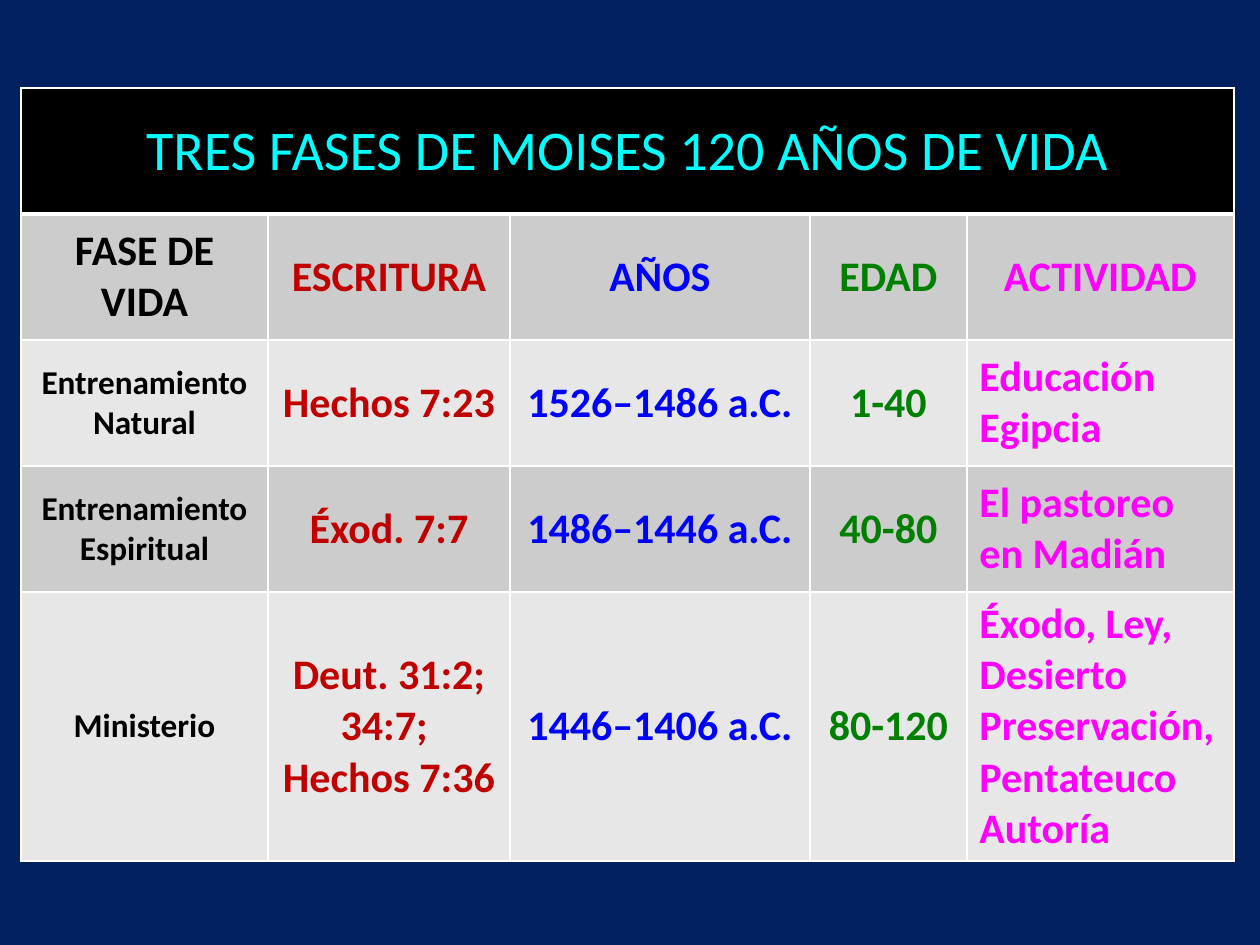
"""Build the slide with the table of the three phases of the life of Moses."""
import pptx
import pptx.util
from pptx.dml.color import RGBColor
from pptx.enum.text import MSO_ANCHOR, PP_ALIGN
from pptx.oxml import parse_xml
from pptx.oxml.ns import nsdecls

TITLE = "TRES FASES DE MOISES 120 AÑOS DE VIDA"
ROWS = [
    ["FASE DE VIDA", "ESCRITURA", "AÑOS", "EDAD", "ACTIVIDAD"],
    ["Entrenamiento\nNatural", "Hechos 7:23", "1526–1486 a.C.", "1-40",
     "Educación\nEgipcia"],
    ["Entrenamiento\nEspiritual", "Éxod. 7:7", "1486–1446 a.C.", "40-80",
     "El pastoreo en Madián"],
    ["Ministerio", "Deut. 31:2; 34:7; \nHechos 7:36", "1446–1406 a.C.", "80-120",
     "Éxodo, Ley, Desierto Preservación, Pentateuco Autoría"],
]
COLORS = {
    "background": "002060", "border": "FFFFFF", "title": "00FFFF",
    "title_fill": "000000", "dark": "CCCCCC", "light": "E7E7E7",
    "phase": "000000", "scripture": "C00000", "years": "0000FF",
    "age": "008000", "activity": "FF00FF",
}
COLUMNS = [("phase", 247), ("scripture", 242), ("years", 300), ("age", 157),
           ("activity", 267)]
HEIGHTS = [126, 126, 126, 126, 269]
LEFT, TOP = 21, 88
FONT = "Calibri"


def px(n):
    return pptx.util.Emu(round(n * 914400 / 126))


def rgb(name):
    return RGBColor.from_string(COLORS[name])


def style_cell(cell, fill, top=1, bottom=1):
    tc_pr = cell._tc.get_or_add_tcPr()
    for side, width in (("L", 1), ("R", 1), ("T", top), ("B", bottom)):
        tc_pr.append(parse_xml(
            f'<a:ln{side} {nsdecls("a")} w="{pptx.util.Pt(width)}"><a:solidFill>'
            f'<a:srgbClr val="{COLORS["border"]}"/></a:solidFill></a:ln{side}>'))
    cell.fill.solid()
    cell.fill.fore_color.rgb = rgb(fill)
    cell.vertical_anchor = MSO_ANCHOR.MIDDLE


def write(cell, text, size, color, bold=True, align=PP_ALIGN.CENTER):
    tf = cell.text_frame
    for i, line in enumerate(text.split("\n")):
        p = tf.add_paragraph() if i else tf.paragraphs[0]
        p.alignment = align
        r = p.add_run()
        r.text = line
        r.font.name = FONT
        r.font.size = pptx.util.Pt(size)
        r.font.bold = bold
        r.font.color.rgb = rgb(color)


def main():
    prs = pptx.Presentation()
    prs.slide_width, prs.slide_height = px(1260), px(945)
    s = prs.slides.add_slide(prs.slide_layouts[6])
    s.background.fill.solid()
    s.background.fill.fore_color.rgb = rgb("background")

    width = sum(w for _, w in COLUMNS)
    table = s.shapes.add_table(len(HEIGHTS), len(COLUMNS), px(LEFT), px(TOP),
                               px(width), px(sum(HEIGHTS))).table
    for row, height in zip(table.rows, HEIGHTS):
        row.height = px(height)
    for col, (_, w) in zip(table.columns, COLUMNS):
        col.width = px(w)

    for cell in table.rows[0].cells:
        style_cell(cell, "title_fill", bottom=3)
    table.cell(0, 0).merge(table.cell(0, len(COLUMNS) - 1))
    write(table.cell(0, 0), TITLE, 32, "title", bold=False)

    for i, texts in enumerate(ROWS, 1):
        for j, (text, (color, _)) in enumerate(zip(texts, COLUMNS)):
            cell = table.cell(i, j)
            style_cell(cell, "dark" if i % 2 else "light", top=3 if i == 1 else 1)
            body = i > 1
            write(cell, text, 19 if body and color == "phase" else 24, color,
                  align=PP_ALIGN.LEFT if body and color == "activity"
                  else PP_ALIGN.CENTER)
    prs.save("out.pptx")


if __name__ == "__main__":
    main()
